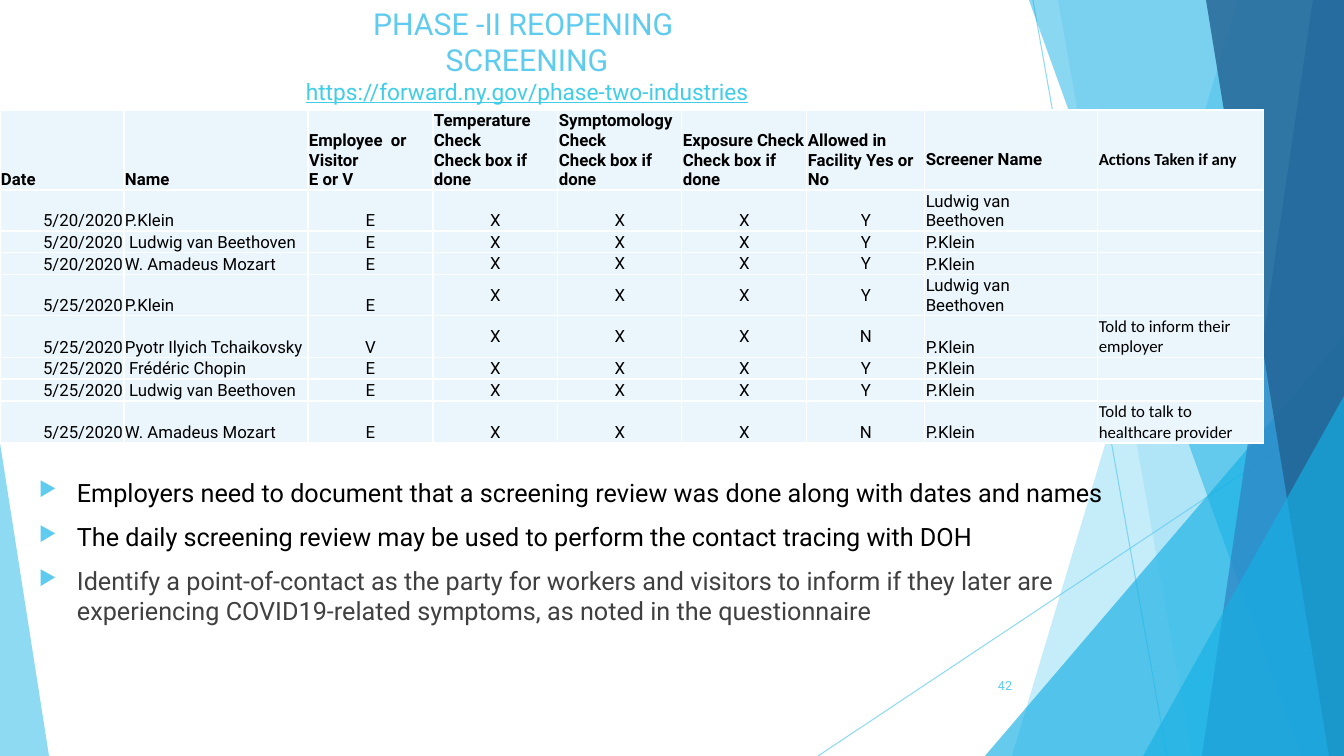
from lxml.etree import SubElement
from pptx import Presentation
from pptx.dml.color import RGBColor
from pptx.enum.shapes import MSO_CONNECTOR, MSO_SHAPE
from pptx.enum.text import MSO_ANCHOR as ANCHOR, MSO_AUTO_SIZE, PP_ALIGN as ALIGN
from pptx.oxml.ns import qn
from pptx.util import Emu, Pt

PX = 914400 / 100.8
WIDTH, HEIGHT = 1344, 756

SKY = RGBColor(0x5F, 0xCB, 0xEF)
CYAN = RGBColor(0x17, 0xB0, 0xE4)
BLUE = RGBColor(0x2E, 0x83, 0xC3)
NAVY = RGBColor(0x22, 0x62, 0x92)
LINK = RGBColor(0x3F, 0xCD, 0xE7)
PALE = RGBColor(0xEA, 0xF6, 0xFC)
WHITE = RGBColor(0xFF, 0xFF, 0xFF)
BLACK = RGBColor(0, 0, 0)
GRAY = RGBColor(0x40, 0x40, 0x40)

COLUMN_WIDTHS = [124, 184, 125, 125, 124, 125, 118, 173, 166]
ROW_HEIGHTS = [80, 41, 21, 22, 41, 42, 21, 22, 42]
HEADER = [
    "Date", "Name", "Employee  or Visitor\vE or V",
    "Temperature Check\vCheck box if done", "Symptomology Check\vCheck box if done",
    "Exposure Check\vCheck box if done", "Allowed in Facility Yes or No",
    "Screener Name", "Actions Taken if any",
]
# Date, name, employee or visitor, allowed, screener, action
SCREENINGS = [
    ("5/20/2020", "P.Klein", "E", "Y", "Ludwig van Beethoven", ""),
    ("5/20/2020", " Ludwig van Beethoven", "E", "Y", "P.Klein", ""),
    ("5/20/2020", "W. Amadeus Mozart", "E", "Y", "P.Klein", ""),
    ("5/25/2020", "P.Klein", "E", "Y", "Ludwig van Beethoven", ""),
    ("5/25/2020", "Pyotr Ilyich Tchaikovsky", "V", "N", "P.Klein", "Told to inform their employer"),
    ("5/25/2020", " Frédéric Chopin", "E", "Y", "P.Klein", ""),
    ("5/25/2020", " Ludwig van Beethoven", "E", "Y", "P.Klein", ""),
    ("5/25/2020", "W. Amadeus Mozart", "E", "N", "P.Klein", "Told to talk to healthcare provider"),
]
COLUMN_ALIGNS = [ALIGN.RIGHT, ALIGN.LEFT] + [ALIGN.CENTER] * 5 + [ALIGN.LEFT] * 2
CHECK_COLUMNS = range(3, 7)
SCREENER, ACTION = 7, 8

POINTS = [
    ("Employers need to document that a screening review was done along with dates and names", BLACK),
    ("The daily screening review may be used to perform the contact tracing with DOH", BLACK),
    ("Identify a point-of-contact as the party for workers and visitors to inform if they later are "
     "experiencing COVID19-related symptoms, as noted in the questionnaire", GRAY),
]


def px(*lengths):
    return [Emu(round(length * PX)) for length in lengths]


def set_font(paragraph, size, color, name="Roboto", bold=False):
    font = paragraph.font
    font.size, font.name, font.bold = Pt(size), name, bold
    font.color.rgb = color


def set_opacity(element, percent):
    for color in element.iter(qn("a:srgbClr")):
        SubElement(color, qn("a:alpha"), val=str(percent * 1000))


def paint(shape, color, opacity):
    shape.shadow.inherit = False
    shape.fill.solid()
    shape.fill.fore_color.rgb = color
    shape.line.fill.background()
    set_opacity(shape.fill._xPr, opacity)


def add_thin_line(slide, *ends):
    line = slide.shapes.add_connector(MSO_CONNECTOR.STRAIGHT, *px(*ends))
    line.line.width = Pt(0.75)
    line.line.color.rgb = SKY
    properties = line._element.spPr
    set_opacity(properties, 70)
    SubElement(properties, qn("a:effectLst"))


def add_band(slide, top_x, bottom_x, color, opacity):
    """Full-height band from a slanted left edge to the right slide edge."""
    builder = slide.shapes.build_freeform(top_x, 0, scale=PX)
    builder.add_line_segments([(WIDTH, 0), (WIDTH, HEIGHT), (bottom_x, HEIGHT)])
    paint(builder.convert_to_shape(), color, opacity)


def add_triangle(slide, box, apex, color, opacity):
    triangle = slide.shapes.add_shape(MSO_SHAPE.ISOSCELES_TRIANGLE, *px(*box))
    triangle.adjustments[0] = apex
    paint(triangle, color, opacity)


def add_facets(slide):
    add_thin_line(slide, 1033, 0, 1167, HEIGHT)
    add_thin_line(slide, WIDTH, 406, 818, HEIGHT)
    add_band(slide, 1238, 1012, SKY, 36)
    add_band(slide, 1058, 1192, SKY, 20)
    add_triangle(slide, (985, 336, 359, 420), 1, CYAN, 66)
    add_band(slide, 1029, 1301, CYAN, 50)
    add_band(slide, 1313, 1202, BLUE, 70)
    add_band(slide, 1206, 1329, NAVY, 80)
    add_triangle(slide, (1143, 396, 201, 360), 1, CYAN, 66)
    add_triangle(slide, (0, 443, 49, 313), 0, SKY, 70)


def set_title(slide):
    title = slide.shapes.title
    title.left, title.top, title.width, title.height = px(53, 0, 948, 145)
    frame = title.text_frame
    frame.auto_size = MSO_AUTO_SIZE.NONE
    frame.vertical_anchor = ANCHOR.TOP
    heading, address = frame.paragraphs[0], frame.add_paragraph()
    heading.text = "PHASE -II REOPENING \vSCREENING"
    address.text = "https://forward.ny.gov/phase-two-industries"
    set_font(heading, 21.6, SKY)
    set_font(address, 16.2, LINK)
    address.font.underline = True
    for paragraph in frame.paragraphs:
        paragraph.alignment = ALIGN.CENTER


def add_borders(cell):
    properties = cell._tc.get_or_add_tcPr()
    for side in ("lnL", "lnR", "lnT", "lnB"):
        border = SubElement(properties, qn(f"a:{side}"), w=str(Pt(1)))
        fill = SubElement(border, qn("a:solidFill"))
        SubElement(fill, qn("a:srgbClr"), val=str(WHITE))


def fill_cell(cell, text, row, column):
    header = row == 0
    add_borders(cell)
    cell.fill.solid()
    cell.fill.fore_color.rgb = PALE
    cell.margin_left, cell.margin_top, cell.margin_right, cell.margin_bottom = px(
        1, 1, 8 if column == SCREENER else 1, 20 if header and column >= SCREENER else 0)
    middle = column in CHECK_COLUMNS and 1 < row < len(SCREENINGS)
    cell.vertical_anchor = ANCHOR.MIDDLE if middle else ANCHOR.BOTTOM
    paragraph = cell.text_frame.paragraphs[0]
    paragraph.text = text
    paragraph.alignment = ALIGN.LEFT if header else COLUMN_ALIGNS[column]
    set_font(paragraph, 12, BLACK, "Calibri" if column == ACTION else "Roboto", header)


def add_screening_table(slide):
    rows = [HEADER] + [
        [date, name, role, "X", "X", "X", allowed, screener, action]
        for date, name, role, allowed, screener, action in SCREENINGS
    ]
    box = px(0, 110, sum(COLUMN_WIDTHS), sum(ROW_HEIGHTS))
    table = slide.shapes.add_table(len(rows), len(HEADER), *box).table
    table.horz_banding = False
    for column, width in zip(table.columns, px(*COLUMN_WIDTHS)):
        column.width = width
    for row, height in zip(table.rows, px(*ROW_HEIGHTS)):
        row.height = height
    for row, texts in enumerate(rows):
        for column, text in enumerate(texts):
            fill_cell(table.cell(row, column), text, row, column)


def add_text_box(slide, *box):
    frame = slide.shapes.add_textbox(*px(*box)).text_frame
    frame.word_wrap = True
    return frame


def add_bullet(paragraph):
    properties = paragraph._p.get_or_add_pPr()
    indent = px(38)[0]
    properties.set("marL", str(indent))
    properties.set("indent", str(-indent))
    color = SubElement(properties, qn("a:buClr"))
    SubElement(color, qn("a:srgbClr"), val=str(SKY))
    SubElement(properties, qn("a:buSzPct"), val="80000")
    SubElement(properties, qn("a:buChar"), char="▶")


def add_points(slide):
    frame = add_text_box(slide, 29, 472, 1149, 176)
    for index, (text, color) in enumerate(POINTS):
        paragraph = frame.add_paragraph() if index else frame.paragraphs[0]
        paragraph.text = text
        paragraph.space_before = Pt(10)
        add_bullet(paragraph)
        set_font(paragraph, 18, color)


def add_slide_number(slide):
    frame = add_text_box(slide, 946, 666, 76, 40)
    frame.vertical_anchor = ANCHOR.MIDDLE
    paragraph = frame.paragraphs[0]
    paragraph.text = "42"
    paragraph.alignment = ALIGN.RIGHT
    set_font(paragraph, 9, SKY)


def main():
    presentation = Presentation()
    presentation.slide_width, presentation.slide_height = px(WIDTH, HEIGHT)
    slide = presentation.slides.add_slide(presentation.slide_layouts[5])
    add_facets(slide)
    set_title(slide)
    add_screening_table(slide)
    add_points(slide)
    add_slide_number(slide)
    presentation.save("out.pptx")


if __name__ == "__main__":
    main()
